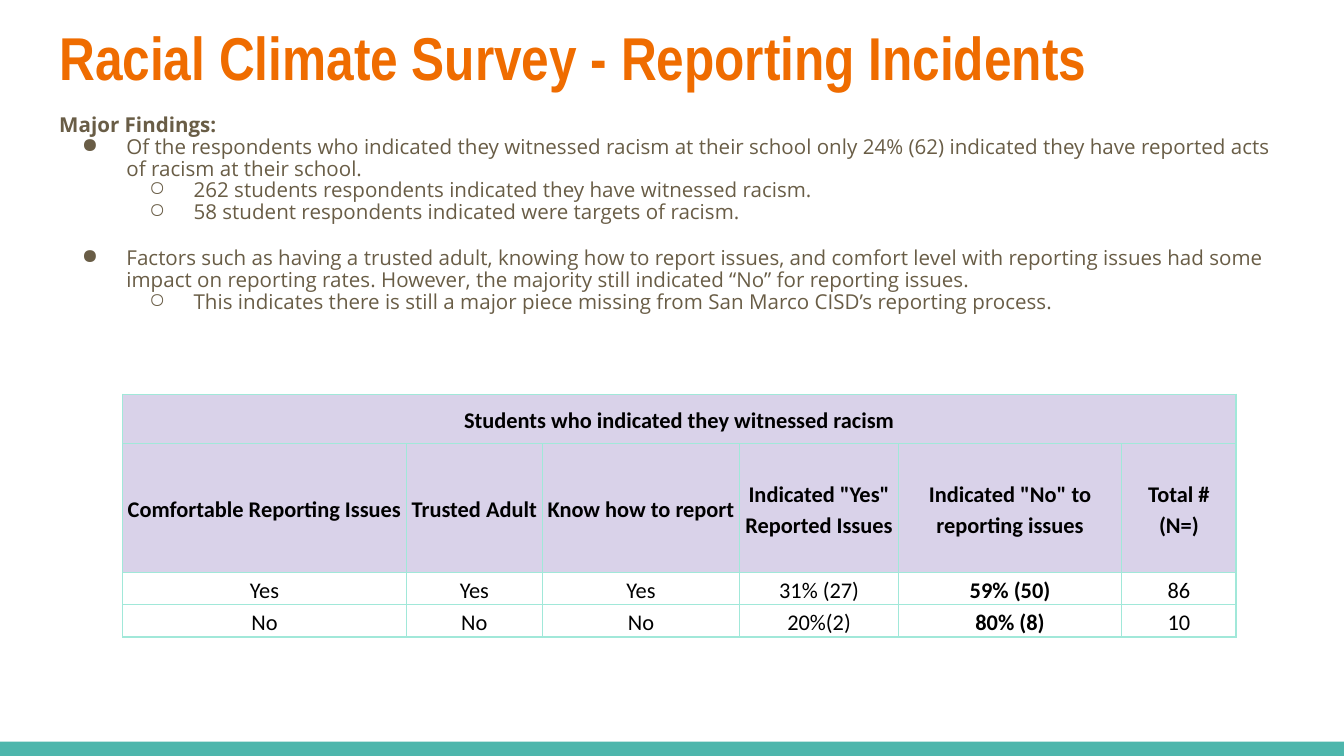
from lxml import etree
from pptx import Presentation
from pptx.dml.color import RGBColor
from pptx.enum.shapes import MSO_SHAPE
from pptx.enum.text import MSO_ANCHOR, MSO_AUTO_SIZE, PP_ALIGN
from pptx.oxml.ns import qn
from pptx.util import Cm, Pt

RECT = MSO_SHAPE.RECTANGLE
TOP, MIDDLE, BOTTOM = MSO_ANCHOR.TOP, MSO_ANCHOR.MIDDLE, MSO_ANCHOR.BOTTOM
LEFT, CENTER = PP_ALIGN.LEFT, PP_ALIGN.CENTER
NO_AUTOFIT = MSO_AUTO_SIZE.NONE

COLORS = {
    "title": "EF6C00", "body": "695D46", "bar": "4DB6AC",
    "header": "D9D2E9", "border": "A1E8D9", "cell": "000000",
}

# Content
TITLE = "Racial Climate Survey - Reporting Incidents"
FINDINGS_HEADING = "Major Findings:"
FINDINGS = [  # (finding, supporting details)
    ("Of the respondents who indicated they witnessed racism at their school only "
     "24% (62) indicated they have reported acts of racism at their school.",
     ["262 students respondents indicated they have witnessed racism.",
      "58 student respondents indicated were targets of racism."]),
    ("Factors such as having a trusted adult, knowing how to report issues, and "
     "comfort level with reporting issues had some impact on reporting rates. "
     "However, the majority still indicated “No” for reporting issues.",
     ["This indicates there is still a major piece missing from San Marco CISD’s "
      "reporting process."]),
]
TABLE_TITLE = "Students who indicated they witnessed racism"
TABLE_ROWS = [
    ["Comfortable Reporting Issues", "Trusted Adult", "Know how to report",
     'Indicated "Yes" Reported Issues', 'Indicated "No" to reporting issues',
     "Total #\n(N=)"],
    ["Yes", "Yes", "Yes", "31% (27)", "59% (50)", "86"],
    ["No", "No", "No", "20%(2)", "80% (8)", "10"],
]
COL_WIDTHS = [5.36, 2.57, 3.73, 3, 4.22, 2.16]
ROW_HEIGHTS = [0.94, 2.43, 0.61, 0.61]
HEADER_ROWS = 2
BOLD_COL = 4
BULLETS = ["●", "○"]


def rgb(name):
    return RGBColor.from_string(COLORS[name])


def add_run(p, text, size, font, color, bold=False):
    r = p.add_run()
    r.text = text
    r.font.size, r.font.name, r.font.bold = Pt(size), font, bold
    r.font.color.rgb = rgb(color)


def add_color(parent, name):
    etree.SubElement(parent, qn("a:srgbClr"), val=COLORS[name])


def set_bullet(p, level):
    p.level = level
    pPr = p._p.get_or_add_pPr()
    pPr.set("marL", str(Cm(1.27 * (level + 1))))
    pPr.set("indent", str(Cm(-0.84)))
    add_color(etree.SubElement(pPr, qn("a:buClr")), "body")
    etree.SubElement(pPr, qn("a:buChar"), char=BULLETS[level])


def set_borders(cell):
    tcPr = cell._tc.get_or_add_tcPr()
    for i, side in enumerate(("lnL", "lnR", "lnT", "lnB")):
        ln = etree.Element(qn("a:" + side), w=str(Pt(0.75)))
        add_color(etree.SubElement(ln, qn("a:solidFill")), "border")
        tcPr.insert(i, ln)


def fill_cell(cell, text, header, bold):
    cell.margin_left = cell.margin_right = Cm(0.07)
    cell.margin_top = cell.margin_bottom = 0
    cell.vertical_anchor = MIDDLE if header else BOTTOM
    if header:
        cell.fill.solid()
        cell.fill.fore_color.rgb = rgb("header")
    else:
        cell.fill.background()
    set_borders(cell)
    tf = cell.text_frame
    for i, line in enumerate(text.split("\n") if text else []):
        p = tf.add_paragraph() if i else tf.paragraphs[0]
        p.alignment, p.line_spacing = CENTER, 1.15
        add_run(p, line, 12, "Calibri", "cell", bold)


def format_frame(tf):
    tf.word_wrap, tf.auto_size, tf.vertical_anchor = True, NO_AUTOFIT, TOP
    tf.margin_left = tf.margin_right = Cm(0.25)
    tf.margin_top = tf.margin_bottom = Cm(0.25)


prs = Presentation()
prs.slide_width, prs.slide_height = Cm(25.4), Cm(14.29)
s = prs.slides.add_slide(prs.slide_layouts[5])

# Bottom bar
bar = s.shapes.add_shape(RECT, 0, Cm(14.02), prs.slide_width, Cm(0.27))
bar.shadow.inherit = False
bar.fill.solid()
bar.fill.fore_color.rgb = rgb("bar")
bar.line.fill.background()

# Title
title = s.shapes.title
title.left, title.top, title.width, title.height = Cm(0.87), Cm(0.33), Cm(23.67), Cm(1.6)
format_frame(title.text_frame)
p = title.text_frame.paragraphs[0]
p.alignment, p.line_spacing = LEFT, 0.85
add_run(p, TITLE, 32.4, "Arial Narrow", "title", True)

# Findings
tf = s.shapes.add_textbox(Cm(0.87), Cm(1.93), Cm(23.67), Cm(4.93)).text_frame
format_frame(tf)
p = tf.paragraphs[0]
p.line_spacing = 0.88
add_run(p, FINDINGS_HEADING, 11, "Open Sans", "body", True)
for i, (finding, details) in enumerate(FINDINGS):
    for j, text in enumerate([finding] + details):
        p = tf.add_paragraph()
        p.line_spacing = 0.88
        p.space_before = Pt(13.2 if i and not j else 0)
        set_bullet(p, min(j, 1))
        add_run(p, text, 11, "Open Sans", "body")

# Survey table
rows = [[TABLE_TITLE] + [""] * (len(COL_WIDTHS) - 1)] + TABLE_ROWS
table = s.shapes.add_table(len(rows), len(COL_WIDTHS), Cm(2.32), Cm(7.45),
                           Cm(sum(COL_WIDTHS)), Cm(sum(ROW_HEIGHTS))).table
for col, width in zip(table.columns, COL_WIDTHS):
    col.width = Cm(width)
for i, (row, height) in enumerate(zip(rows, ROW_HEIGHTS)):
    table.rows[i].height = Cm(height)
    header = i < HEADER_ROWS
    for j, text in enumerate(row):
        fill_cell(table.cell(i, j), text, header, header or j == BOLD_COL)
table.cell(0, 0).merge(table.cell(0, len(COL_WIDTHS) - 1))

prs.save("out.pptx")
